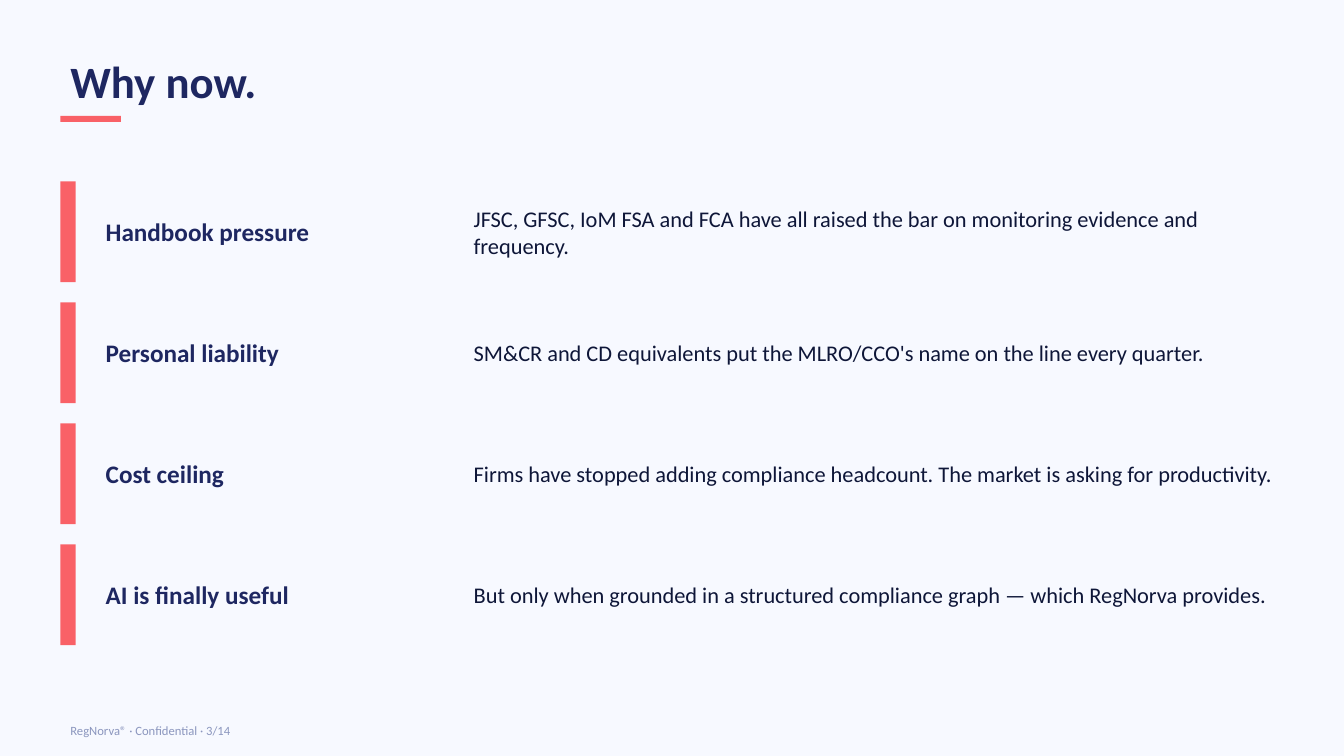
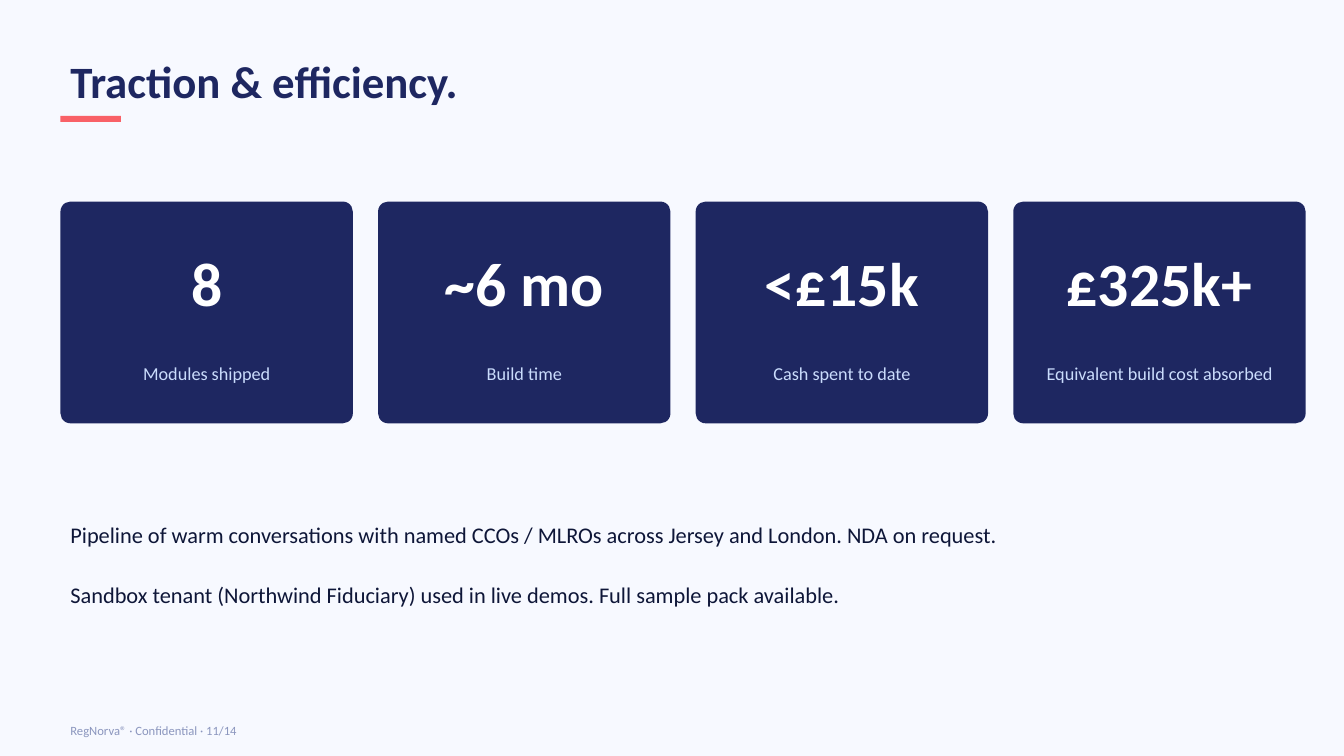
from dataclasses import dataclass

import pptx
import pptx.dml.color
import pptx.enum.shapes
import pptx.enum.text
import pptx.util

Inches = pptx.util.Inches
Shape = pptx.enum.shapes.MSO_SHAPE
Align = pptx.enum.text.PP_ALIGN


@dataclass(frozen=True)
class TextStyle:
    size: int
    color: str
    bold: bool = False
    align: Align = Align.LEFT


@dataclass(frozen=True)
class Theme:
    font: str = "Calibri"
    background: str = "F7F9FF"
    navy: str = "1E2761"
    coral: str = "F96167"
    title: TextStyle = TextStyle(32, "1E2761", bold=True)
    heading: TextStyle = TextStyle(18, "1E2761", bold=True)
    body: TextStyle = TextStyle(16, "0E1638")
    metric: TextStyle = TextStyle(44, "FFFFFF", bold=True, align=Align.CENTER)
    caption: TextStyle = TextStyle(13, "CADCFC", align=Align.CENTER)
    footer: TextStyle = TextStyle(9, "8B96BE")


THEME = Theme()
LEFT = 0.6
CONTENT_WIDTH = 12
TOTAL_PAGES = 14

REASONS = [
    ("Handbook pressure",
     "JFSC, GFSC, IoM FSA and FCA have all raised the bar on monitoring evidence and frequency."),
    ("Personal liability",
     "SM&CR and CD equivalents put the MLRO/CCO's name on the line every quarter."),
    ("Cost ceiling",
     "Firms have stopped adding compliance headcount. The market is asking for productivity."),
    ("AI is finally useful",
     "But only when grounded in a structured compliance graph — which RegNorva provides."),
]
METRICS = [
    ("8", "Modules shipped"),
    ("~6 mo", "Build time"),
    ("<£15k", "Cash spent to date"),
    ("£325k+", "Equivalent build cost absorbed"),
]
TRACTION_NOTES = [
    "Pipeline of warm conversations with named CCOs / MLROs across Jersey and London. NDA on request.",
    "Sandbox tenant (Northwind Fiduciary) used in live demos. Full sample pack available.",
]


def rgb(color):
    return pptx.dml.color.RGBColor.from_string(color)


def add_text(slide, text, style, left, top, width, height):
    box = slide.shapes.add_textbox(Inches(left), Inches(top), Inches(width), Inches(height))
    frame = box.text_frame
    frame.word_wrap = True
    frame.vertical_anchor = pptx.enum.text.MSO_ANCHOR.MIDDLE
    paragraph = frame.paragraphs[0]
    paragraph.text = text
    paragraph.alignment = style.align
    paragraph.font.name = THEME.font
    paragraph.font.size = pptx.util.Pt(style.size)
    paragraph.font.bold = style.bold
    paragraph.font.color.rgb = rgb(style.color)


def add_block(slide, preset, color, left, top, width, height):
    block = slide.shapes.add_shape(
        preset, Inches(left), Inches(top), Inches(width), Inches(height))
    block.shadow.inherit = False
    block.fill.solid()
    block.fill.fore_color.rgb = rgb(color)
    block.line.fill.background()
    return block


def add_page(deck, title, page_number):
    """Add a slide with the shared title, accent rule and footer."""
    slide = deck.slides.add_slide(deck.slide_layouts[6])
    add_text(slide, title, THEME.title, LEFT, 0.45, CONTENT_WIDTH, 0.7)
    add_block(slide, Shape.RECTANGLE, THEME.coral, LEFT, 1.15, 0.6, 0.06)
    footer = " · ".join(["RegNorva®", "Confidential", f"{page_number}/{TOTAL_PAGES}"])
    add_text(slide, footer, THEME.footer, LEFT, 7.1, CONTENT_WIDTH, 0.3)
    return slide


def add_reason(slide, heading, detail, top):
    height = 1
    add_block(slide, Shape.RECTANGLE, THEME.coral, LEFT, top, 0.15, height)
    add_text(slide, heading, THEME.heading, 0.95, top, 3.5, height)
    add_text(slide, detail, THEME.body, 4.6, top, 8.2, height)


def add_metric_card(slide, value, caption, left, width):
    card = add_block(slide, Shape.ROUNDED_RECTANGLE, THEME.navy, left, 2, width, 2.2)
    card.adjustments[0] = 0.045
    add_text(slide, value, THEME.metric, left, 2.2, width, 1.2)
    add_text(slide, caption, THEME.caption, left, 3.4, width, 0.6)


def build_why_now(deck):
    slide = add_page(deck, "Why now.", 3)
    for row, (heading, detail) in enumerate(REASONS):
        add_reason(slide, heading, detail, 1.8 + row * 1.2)


def build_traction(deck):
    slide = add_page(deck, "Traction & efficiency.", 11)
    card_width, gap = 2.9, 0.25
    for column, (value, caption) in enumerate(METRICS):
        add_metric_card(slide, value, caption, LEFT + column * (card_width + gap), card_width)
    note_height = 0.6
    for row, note in enumerate(TRACTION_NOTES):
        add_text(slide, note, THEME.body, LEFT, 5 + row * note_height, CONTENT_WIDTH, note_height)


def main():
    deck = pptx.Presentation()
    deck.slide_width, deck.slide_height = Inches(13.33), Inches(7.5)
    background = deck.slide_master.background.fill
    background.solid()
    background.fore_color.rgb = rgb(THEME.background)
    build_why_now(deck)
    build_traction(deck)
    deck.save("out.pptx")


if __name__ == "__main__":
    main()
